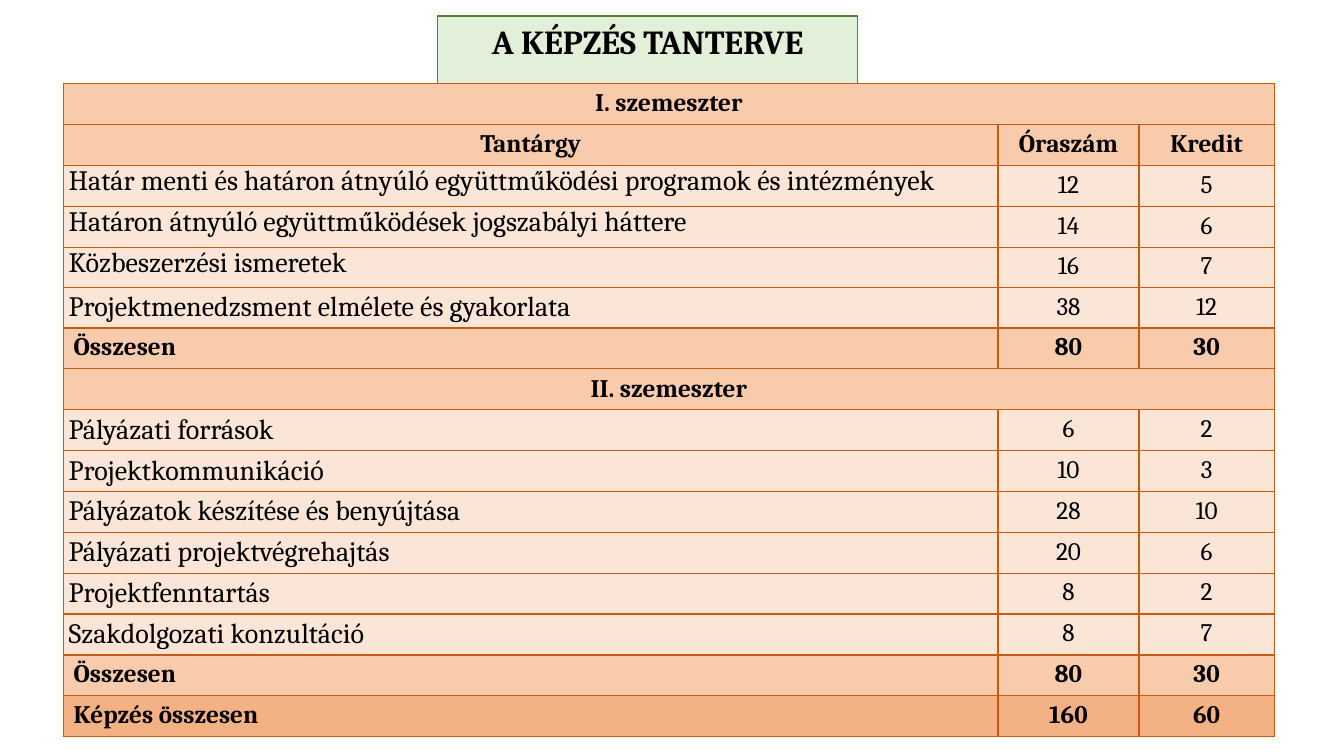
import pptx
import pptx.util
import pptx.dml.color
import pptx.enum.text
import pptx.oxml

Pt = pptx.util.Pt
RGB = pptx.dml.color.RGBColor.from_string
ALIGN = pptx.enum.text.PP_ALIGN
ANCHOR = pptx.enum.text.MSO_ANCHOR

# Content: kind of row, then its cells
TITLE = "A KÉPZÉS TANTERVE"
ROWS = [
    ("band", "I. szemeszter"),
    ("head", "Tantárgy", "Óraszám", "Kredit"),
    ("top", "Határ menti és határon átnyúló együttműködési programok és intézmények", "12", "5"),
    ("top", "Határon átnyúló együttműködések jogszabályi háttere", "14", "6"),
    ("top", "Közbeszerzési ismeretek", "16", "7"),
    ("mid", "Projektmenedzsment elmélete és gyakorlata", "38", "12"),
    ("sum", "Összesen", "80", "30"),
    ("band", "II. szemeszter"),
    ("mid", "Pályázati források", "6", "2"),
    ("mid", "Projektkommunikáció", "10", "3"),
    ("mid", "Pályázatok készítése és benyújtása", "28", "10"),
    ("mid", "Pályázati projektvégrehajtás", "20", "6"),
    ("mid", "Projektfenntartás", "8", "2"),
    ("mid", "Szakdolgozati konzultáció", "8", "7"),
    ("sum", "Összesen", "80", "30"),
    ("total", "Képzés összesen", "160", "60"),
]

THEME = {
    "font": "Cambria", "ink": "000000", "edge": "C55A11",
    "box": "E2F0D9", "rim": "548235",
    "band": "F8CBAD", "head": "F8CBAD", "sum": "F8CBAD",
    "top": "FBE5D6", "mid": "FBE5D6", "total": "F4B183",
    "title": 24, "item": 20, "cell": 18,
}

# Layout in points
BOX = {"left": 312.5, "top": 11.5, "width": 300.2, "height": 36}
GRID = {"left": 45.4, "top": 59.8}
COLS = [667.4, 100.8, 96.5]
ROW = 29.2
LOW = {4: 26, 5: 28}
INSET = {"margin_left": Pt(3.6), "margin_right": Pt(3.6),
         "margin_top": 0, "margin_bottom": 0}


def put(obj, vals):
    for key, val in vals.items():
        setattr(obj, key, val)


def write(frame, text, size, bold, align):
    para = frame.paragraphs[0]
    para.alignment = align
    run = para.add_run()
    run.text = text
    put(run.font, {"name": THEME["font"], "size": Pt(size), "bold": bold})
    run.font.color.rgb = RGB(THEME["ink"])


def paint(part, color):
    part.fill.solid()
    part.fill.fore_color.rgb = RGB(color)


def edge(cell):
    props = cell._tc.get_or_add_tcPr()
    for side in ("lnL", "lnR", "lnT", "lnB"):
        props.append(pptx.oxml.parse_xml(
            f'<a:{side} xmlns:a="http://schemas.openxmlformats.org/drawingml/2006/main" '
            f'w="{Pt(1)}"><a:solidFill><a:srgbClr val="{THEME["edge"]}"/>'
            f'</a:solidFill></a:{side}>'))


def main():
    deck = pptx.Presentation()
    put(deck, {"slide_width": Pt(960), "slide_height": Pt(540)})
    slide = deck.slides.add_slide(deck.slide_layouts[5])

    # Title box
    title = slide.shapes.title
    put(title, {key: Pt(val) for key, val in BOX.items()})
    paint(title, THEME["box"])
    title.line.color.rgb = RGB(THEME["rim"])
    title.line.width = Pt(1)
    put(title.text_frame, {
        "word_wrap": True, "vertical_anchor": ANCHOR.TOP,
        "auto_size": pptx.enum.text.MSO_AUTO_SIZE.SHAPE_TO_FIT_TEXT})
    write(title.text_frame, TITLE, THEME["title"], True, ALIGN.CENTER)

    # Table grid
    highs = [LOW.get(i, ROW) for i in range(len(ROWS))]
    table = slide.shapes.add_table(
        len(ROWS), len(COLS), Pt(GRID["left"]), Pt(GRID["top"]),
        Pt(sum(COLS)), Pt(sum(highs))).table
    put(table, {"first_row": False, "horz_banding": False})
    for col, width in zip(table.columns, COLS):
        col.width = Pt(width)
    for row, high in zip(table.rows, highs):
        row.height = Pt(high)

    # Table cells
    for r, (kind, *texts) in enumerate(ROWS):
        item = kind in ("top", "mid")
        for c in range(len(COLS)):
            cell = table.cell(r, c)
            edge(cell)
            paint(cell, THEME[kind])
            if c >= len(texts):
                continue
            name = item and c == 0
            if name:
                put(cell, INSET)
            if name and kind == "mid" or kind == "band" and r > 0:
                cell.vertical_anchor = ANCHOR.MIDDLE
            left = c == 0 and kind not in ("band", "head")
            write(cell.text_frame, texts[c], THEME["item" if name else "cell"],
                  not item, ALIGN.LEFT if left else ALIGN.CENTER)
        if kind == "band":
            table.cell(r, 0).merge(table.cell(r, len(COLS) - 1))

    deck.save("out.pptx")


if __name__ == "__main__":
    main()
